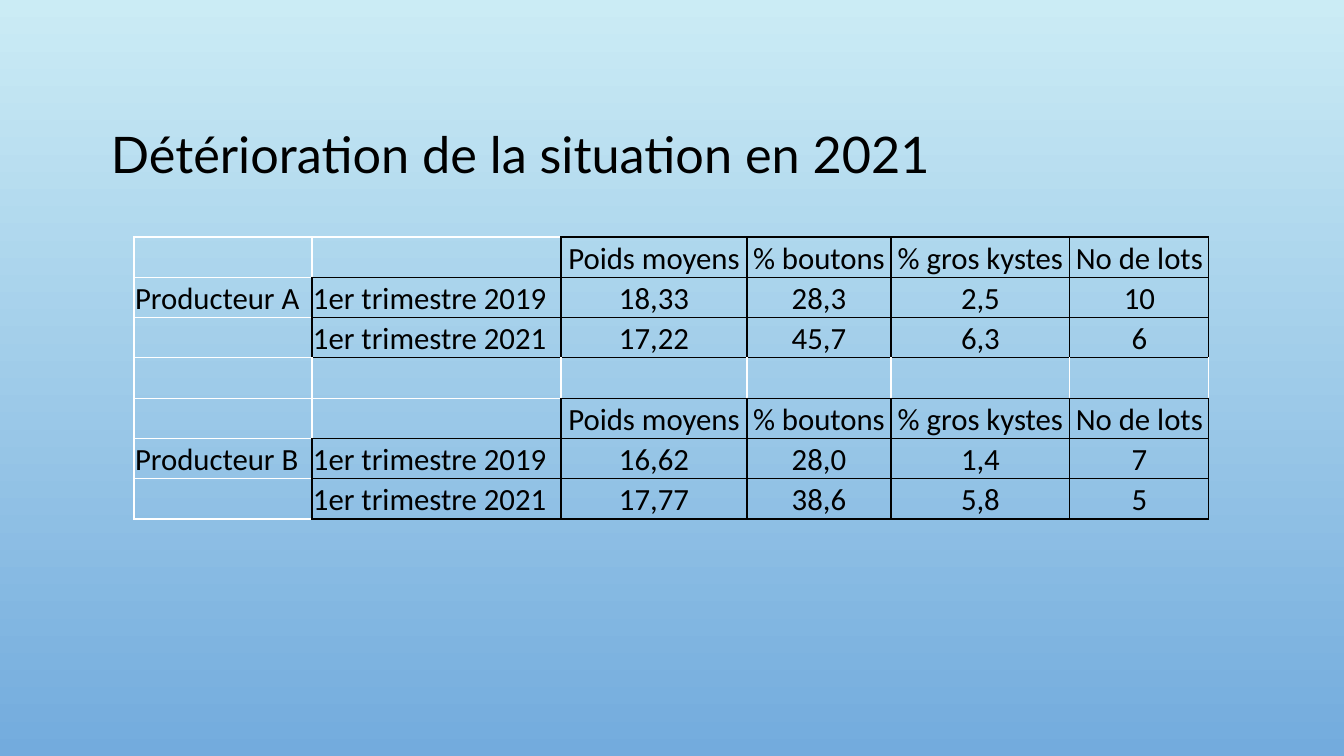
from lxml.etree import SubElement as Sub
from pptx import Presentation
from pptx.dml.color import RGBColor as Rgb
from pptx.enum.text import MSO_ANCHOR as Anchor, PP_ALIGN as Align
from pptx.oxml.ns import qn
from pptx.util import Pt

COLORS = {"top": "CBECF5", "base": "73ABDD", "ink": "000000", "pale": "FFFFFF"}
HEAD = ["", "", "Poids moyens", "% boutons", "% gros kystes", "No de lots"]
ROWS = [
    HEAD,
    ["Producteur A", "1er trimestre 2019", "18,33", "28,3", "2,5", "10"],
    ["", "1er trimestre 2021", "17,22", "45,7", "6,3", "6"],
    [""] * 6,
    HEAD,
    ["Producteur B", "1er trimestre 2019", "16,62", "28,0", "1,4", "7"],
    ["", "1er trimestre 2021", "17,77", "38,6", "5,8", "5"],
]
COLS = [178, 249, 186, 144, 179, 139]
SIDES = {"L": (0, -1), "R": (0, 1), "T": (-1, 0), "B": (1, 0)}


def px(num):
    return round(num * 914400 / 100.8)


def rgb(name):
    return Rgb.from_string(COLORS[name])


def put(item, **form):
    for key, val in form.items():
        setattr(item, key, val)


def inked(row, col):
    return 0 <= row < len(ROWS) and 0 < col < len(COLS) and ROWS[row][col] != ""


class Deck:
    def __init__(self):
        self.show = Presentation()
        put(self.show, slide_width=px(1344), slide_height=px(756))
        self.slide = self.show.slides.add_slide(self.show.slide_layouts[6])

    def back(self, *names):
        fill = self.slide.background.fill
        fill.gradient()
        fill.gradient_angle = 270
        for pos, (stop, name) in enumerate(zip(fill.gradient_stops, names)):
            stop.color.rgb = rgb(name)
            stop.position = pos

    def label(self, para, text, font, size, align=Align.LEFT):
        para.alignment = align
        run = para.add_run()
        run.text = text
        put(run.font, name=font, size=Pt(size), bold=False)
        run.font.color.rgb = rgb("ink")

    def title(self, text, *area):
        frame = self.slide.shapes.add_textbox(*map(px, area)).text_frame
        put(frame, word_wrap=True, vertical_anchor=Anchor.MIDDLE)
        para = frame.paragraphs[0]
        para.line_spacing = 0.9
        self.label(para, text, "Lato", 36)

    def edge(self, cell, side, name):
        line = Sub(cell._tc.get_or_add_tcPr(), qn(f"a:ln{side}"), w=str(Pt(1)))
        Sub(Sub(line, qn("a:solidFill")), qn("a:srgbClr"), val=COLORS[name])

    def cell(self, cell, row, col):
        put(cell, vertical_anchor=Anchor.BOTTOM, margin_left=px(1),
            margin_right=px(1), margin_top=px(1), margin_bottom=0)
        for side, (down, over) in SIDES.items():
            dark = inked(row, col) or inked(row + down, col + over)
            self.edge(cell, side, "ink" if dark else "pale")
        cell.fill.background()
        if ROWS[row][col]:
            align = Align.CENTER if col > 1 else Align.LEFT
            self.label(cell.text_frame.paragraphs[0], ROWS[row][col], "Calibri", 22, align)

    def table(self, left, top, high):
        area = map(px, (left, top, sum(COLS), high))
        grid = self.slide.shapes.add_table(len(ROWS), len(COLS), *area).table
        put(grid, first_row=False, horz_banding=False)
        for col, wide in enumerate(COLS):
            grid.columns[col].width = px(wide)
            for row in range(len(ROWS)):
                self.cell(grid.cell(row, col), row, col)


def main():
    deck = Deck()
    deck.back("top", "base")
    deck.title("Détérioration de la situation en 2021", 101, 69, 1142, 176)
    deck.table(134, 237, 282)
    deck.show.save("out.pptx")


if __name__ == "__main__":
    main()
